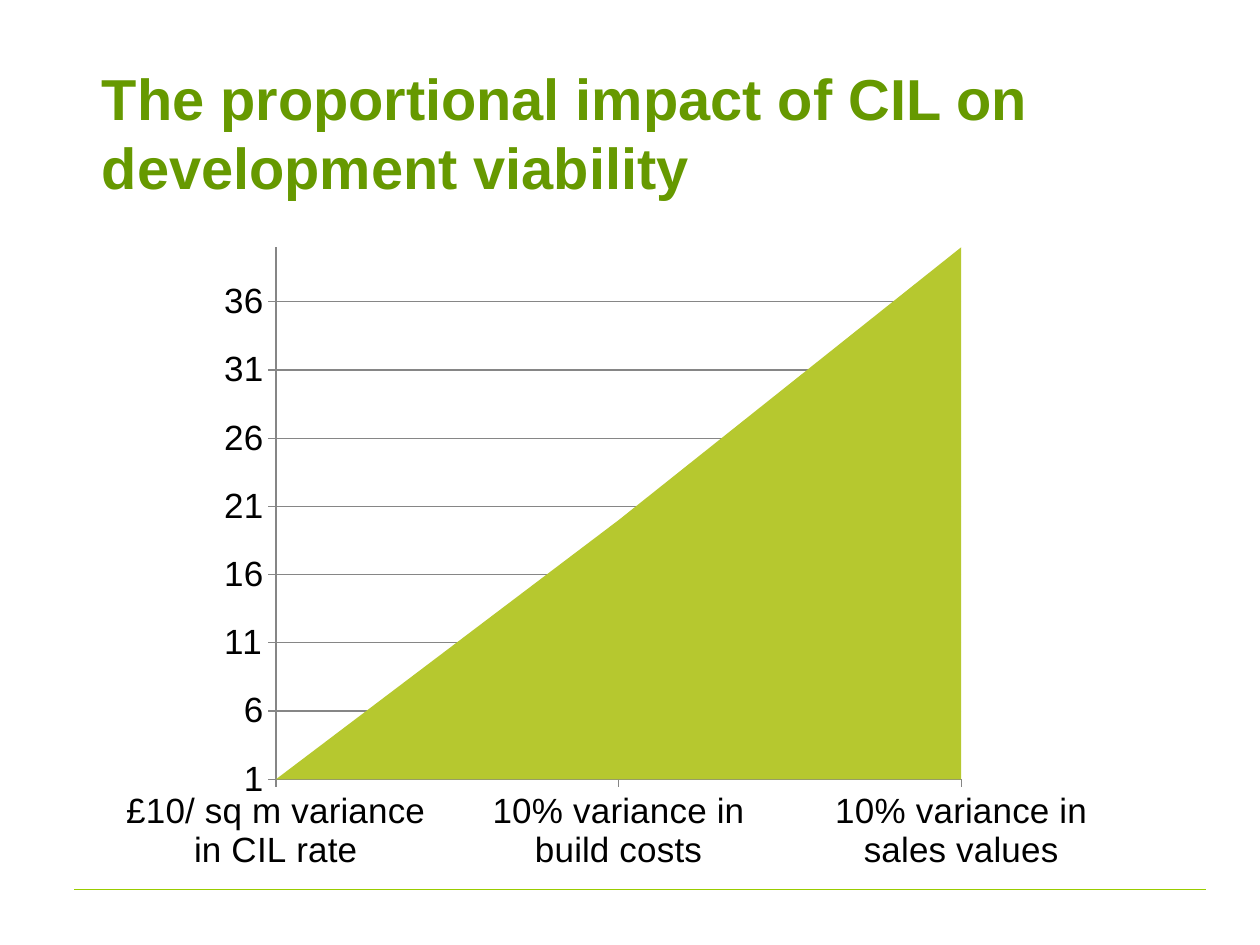
from lxml import etree
from pptx import Presentation
from pptx.chart.data import CategoryChartData
from pptx.dml.color import RGBColor
from pptx.enum.chart import XL_CHART_TYPE, XL_TICK_MARK
from pptx.enum.shapes import MSO_CONNECTOR
from pptx.enum.text import MSO_ANCHOR
from pptx.oxml import parse_xml
from pptx.oxml.ns import nsdecls, qn
from pptx.util import Inches, Pt

AREA = XL_CHART_TYPE.AREA
OUTSIDE = XL_TICK_MARK.OUTSIDE
STRAIGHT = MSO_CONNECTOR.STRAIGHT
MIDDLE = MSO_ANCHOR.MIDDLE
FONT = "Arial"
CATEGORIES = [
    "£10/ sq m variance in CIL rate",
    "10% variance in build costs",
    "10% variance in sales values",
]
VALUES = [1, 20, 40]


def rgb(hex_color):
    """Return the colour for a hex string."""
    return RGBColor.from_string(hex_color)


def style_font(font, size, color, bold=False):
    """Set typeface, size, colour and weight."""
    font.name = FONT
    font.size = Pt(size)
    font.color.rgb = rgb(color)
    font.bold = bold


def add_title(s, text, x, y, w, h):
    """Add the bold slide heading."""
    tf = s.shapes.add_textbox(Inches(x), Inches(y), Inches(w), Inches(h)).text_frame
    tf.word_wrap = True
    tf.vertical_anchor = MIDDLE
    tf.text = text
    style_font(tf.paragraphs[0].runs[0].font, 33, "669900", True)


def add_rule(s, x1, x2, y):
    """Add the thin horizontal footer rule."""
    rule = s.shapes.add_connector(STRAIGHT, Inches(x1), Inches(y), Inches(x2), Inches(y))
    rule.line.color.rgb = rgb("99CC00")
    rule.line.width = Pt(0.75)
    etree.SubElement(rule._element.spPr, qn("a:effectLst"))


def set_plot_layout(chart, x, y, w, h):
    """Fix the inner plot area as fractions of the chart."""
    area = chart._chartSpace.chart.plotArea
    for old in area.findall(qn("c:layout")):
        area.remove(old)
    sizes = "".join(f'<c:{k} val="{v}"/>' for k, v in zip("xywh", (x, y, w, h)))
    area.insert(0, parse_xml(
        f'<c:layout {nsdecls("c")}><c:manualLayout><c:layoutTarget val="inner"/>'
        f'<c:xMode val="edge"/><c:yMode val="edge"/>{sizes}</c:manualLayout></c:layout>'
    ))
    for cross in area.iter(qn("c:crossBetween")):
        cross.set("val", "midCat")


def style_axis(axis):
    """Give an axis its ticks, line and label font."""
    axis.major_tick_mark = OUTSIDE
    axis.format.line.color.rgb = rgb("868686")
    axis.format.line.width = Pt(0.75)
    style_font(axis.tick_labels.font, 20, "000000")


def add_impact_chart(s, x, y, w, h):
    """Add the area chart of relative impact."""
    data = CategoryChartData()
    data.categories = CATEGORIES
    data.add_series("Series 1", VALUES)
    chart = s.shapes.add_chart(
        AREA, Inches(x), Inches(y), Inches(w), Inches(h), data
    ).chart
    chart.has_legend = False
    chart.has_title = False
    style_font(chart.font, 10, "000000")
    for axis in (chart.category_axis, chart.value_axis):
        style_axis(axis)
    scale = chart.value_axis
    scale.minimum_scale, scale.maximum_scale, scale.major_unit = 1, 40, 5
    scale.has_major_gridlines = True
    scale.major_gridlines.format.line.color.rgb = rgb("868686")
    scale.major_gridlines.format.line.width = Pt(0.75)
    fill = chart.plots[0].series[0].format.fill
    fill.solid()
    fill.fore_color.rgb = rgb("B6C82F")
    set_plot_layout(chart, 0.14, 0.02, 0.64, 0.82)


def main():
    """Build and save the slide."""
    prs = Presentation()
    prs.slide_width, prs.slide_height = Inches(10), Inches(7.5)
    s = prs.slides.add_slide(prs.slide_layouts[6])
    add_rule(s, 0.59, 9.57, 7.06)
    add_impact_chart(s, 1, 1.86, 8.5, 5.15)
    add_title(
        s, "The proportional impact of CIL on development viability", 0.71, 0.42, 9, 1.25
    )
    prs.save("out.pptx")


if __name__ == "__main__":
    main()
